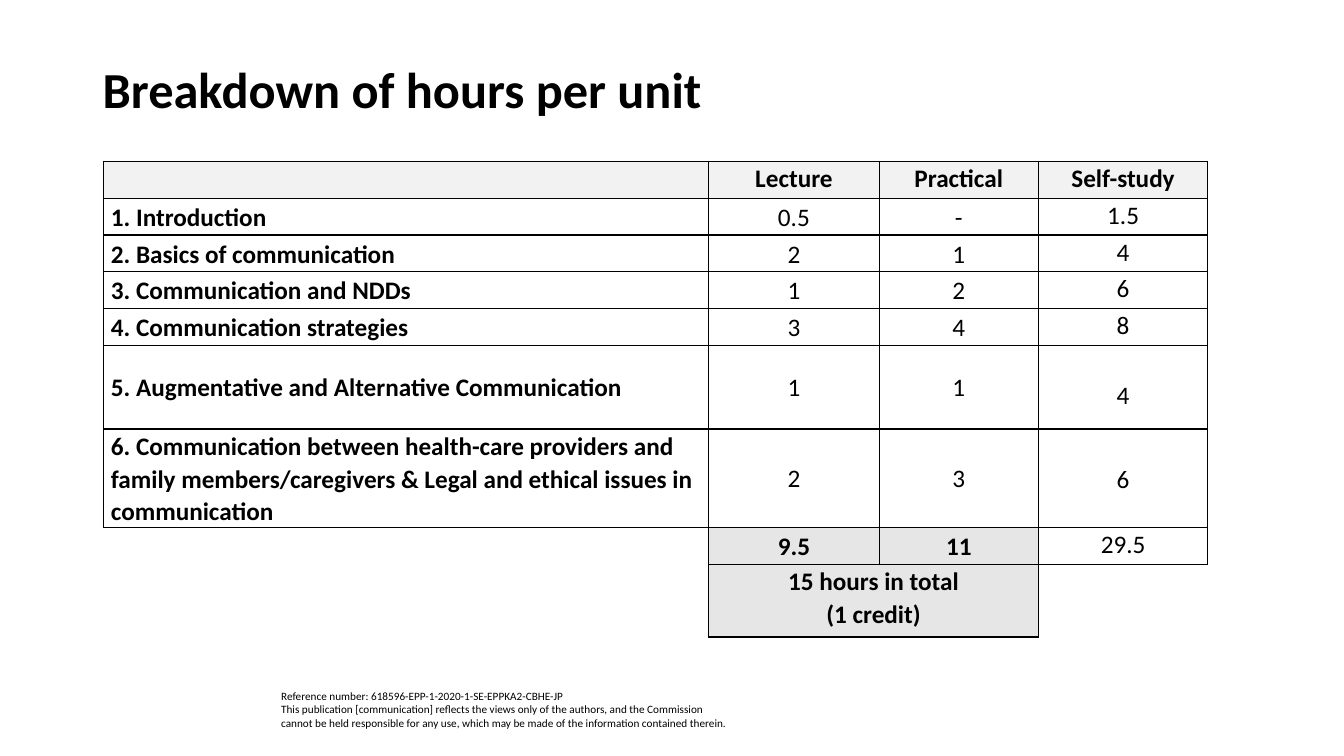
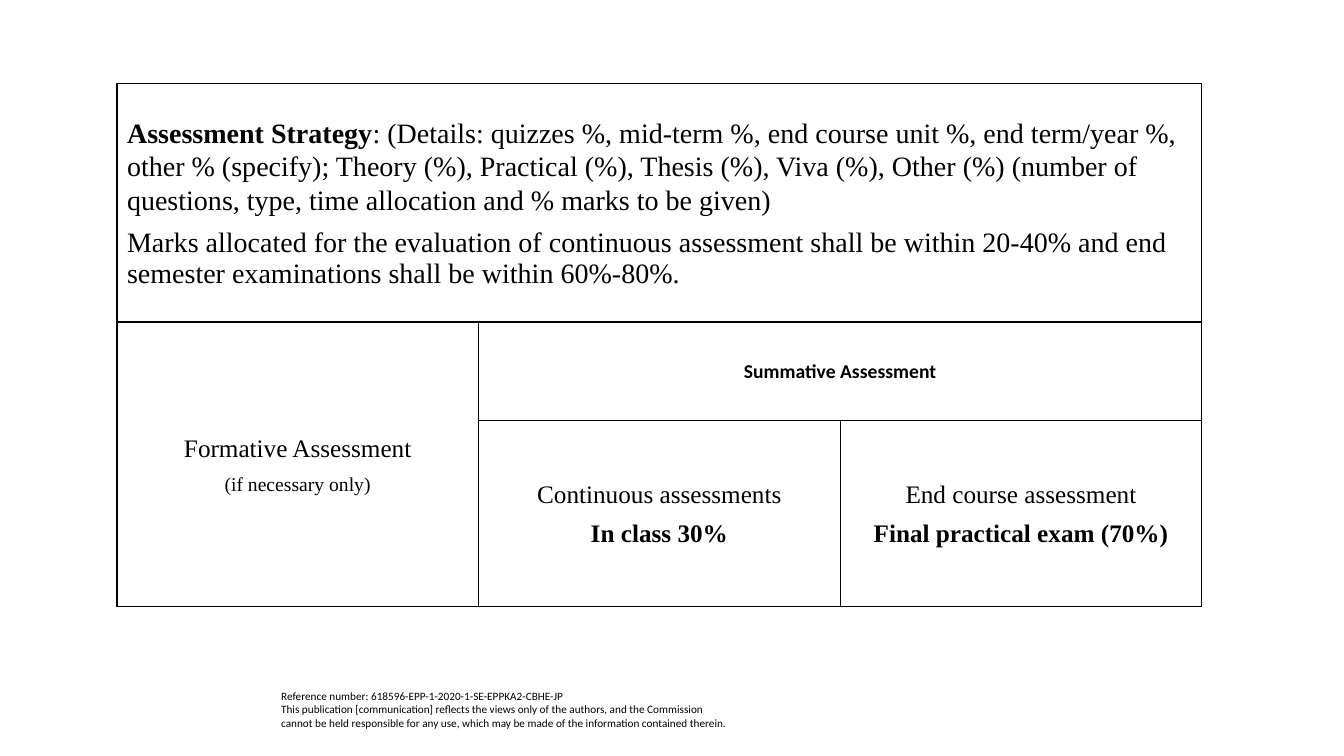
from lxml import etree
from pptx import Presentation
from pptx.dml.color import RGBColor
from pptx.enum.text import MSO_ANCHOR, PP_ALIGN
from pptx.oxml.ns import qn
from pptx.util import Inches, Pt

LEFT, CENTER = PP_ALIGN.LEFT, PP_ALIGN.CENTER
TOP, MIDDLE = MSO_ANCHOR.TOP, MSO_ANCHOR.MIDDLE

COLORS = {"text": "000000", "border": "000000", "plain": "FFFFFF",
          "header": "F2F2F2", "total": "E7E6E6"}
SANS, SERIF = "Calibri", "Times New Roman"
LINE_SPACING = 1.07
LINE_HEIGHT = 0.33  # one 18 pt line in the hours table

# Boxes in inches: left, top, width, height
SLIDE_SIZE = (13.33, 7.5)
TITLE_BOX = (0.92, 0.4, 11.5, 0.96)
FOOTER_BOX = (2.69, 6.79, 4.64, 0.5)
HOURS_BOX = (1.03, 1.6, 10.95, 4.72)
ASSESSMENT_BOX = (1.16, 0.83, 10.76, 5.19)

FOOTER = ("Reference number: 618596-EPP-1-2020-1-SE-EPPKA2-CBHE-JP\v"
          "This publication [communication] reflects the views only of the authors, "
          "and the Commission cannot be held responsible for any use, which may be "
          "made of the information contained therein.")

HOURS_HEADER = ("", "Lecture", "Practical", "Self-study")
HOURS_UNITS = [
    ("1. Introduction", "0.5", "-", "1.5"),
    ("2. Basics of communication", "2", "1", "4"),
    ("3. Communication and NDDs", "1", "2", "6"),
    ("4. Communication strategies", "3", "4", "8"),
    ("5. Augmentative and Alternative Communication", "1", "1", "4"),
    ("6. Communication between health-care providers and family members/caregivers "
     "& Legal and ethical issues in communication", "2", "3", "6"),
]
HOURS_TOTALS = ("", "9.5", "11", "29.5")

STRATEGY_LABEL = "Assessment Strategy"
STRATEGY_DETAILS = (": (Details: quizzes %, mid-term %, end course unit %, end term/year %, "
                    "other % (specify); Theory (%), Practical (%), Thesis (%), Viva (%), "
                    "Other (%) (number of questions, type, time allocation and % marks "
                    "to be given)")
MARKS_RULE = ("Marks allocated for the evaluation of continuous assessment shall be within "
              "20-40% and end semester examinations shall be within 60%-80%.")


# Shared text and table helpers
def style_font(font, size, name=SANS, bold=False):
    font.size, font.name, font.bold = Pt(size), name, bold
    font.color.rgb = RGBColor.from_string(COLORS["text"])


def add_text(slide, box, text, size, bold=False, anchor=TOP):
    shape = slide.shapes.add_textbox(*map(Inches, box))
    frame = shape.text_frame
    frame.word_wrap, frame.vertical_anchor = True, anchor
    frame.text = text
    style_font(frame.paragraphs[0].font, size, bold=bold)


def add_footer(slide):
    add_text(slide, FOOTER_BOX, FOOTER, 8)


def write_cell(cell, lines, size, name=SANS, bold=False, align=CENTER,
               anchor=MIDDLE, spacing=LINE_SPACING, after=0):
    """Fill a cell; each line is a text or a dict with its own text, size, bold."""
    cell.vertical_anchor = anchor
    frame = cell.text_frame
    for index, line in enumerate(lines):
        own = line if isinstance(line, dict) else {"text": line}
        paragraph = frame.paragraphs[0] if index == 0 else frame.add_paragraph()
        paragraph.text = own["text"]
        paragraph.alignment = align
        if index == 0 or not after:
            paragraph.line_spacing = spacing
        if index < len(lines) - 1:
            paragraph.space_after = Pt(after)
        style_font(paragraph.font, own.get("size", size), name, own.get("bold", bold))


def set_borders(cell, sides):
    properties = cell._tc.get_or_add_tcPr()
    for side in "LRTB":
        line = etree.SubElement(properties, qn("a:ln" + side), w=str(Pt(1)))
        if side in sides:
            fill = etree.SubElement(line, qn("a:solidFill"))
            etree.SubElement(fill, qn("a:srgbClr"), val=COLORS["border"])
        else:
            etree.SubElement(line, qn("a:noFill"))


def fill_cell(cell, color):
    cell.fill.solid()
    cell.fill.fore_color.rgb = RGBColor.from_string(COLORS[color])


def add_grid(slide, box, columns, rows, open_cells=None):
    """Add a bordered table whose column and row weights share out the box."""
    open_cells = open_cells or {}
    left, top, width, height = box
    table = slide.shapes.add_table(len(rows), len(columns), *map(Inches, box)).table
    table.first_row = table.horz_banding = False
    for column, weight in zip(table.columns, columns):
        column.width = Inches(width * weight / sum(columns))
    for row, weight in zip(table.rows, rows):
        row.height = Inches(height * weight / sum(rows))
    for row in range(len(rows)):
        for column in range(len(columns)):
            cell = table.cell(row, column)
            set_borders(cell, open_cells.get((row, column), "LRTB"))
            fill_cell(cell, "plain")
    return table


# Hours slide
def fill_hours_table(slide, box):
    row_weights = [0.37] * 5 + [0.84, 0.99, 0.37, 0.73]
    total_row = len(HOURS_UNITS) + 1
    credit_row = total_row + 1
    table = add_grid(slide, box, [6, 1.69, 1.58, 1.68], row_weights,
                     {(total_row, 0): "TR", (credit_row, 0): "R", (credit_row, 3): "LT"})
    for cell in table.iter_cells():
        cell.margin_left = cell.margin_right = Inches(0.07)
        cell.margin_top = cell.margin_bottom = 0

    for row, texts in enumerate([HOURS_HEADER, *HOURS_UNITS, HOURS_TOTALS]):
        for column, text in enumerate(texts):
            cell = table.cell(row, column)
            is_header, is_total = row == 0, row == total_row
            is_self_study = column == 3
            write_cell(cell, [text], 18,
                       bold=is_header or column == 0 or (is_total and not is_self_study),
                       align=LEFT if column == 0 else CENTER,
                       anchor=TOP if is_header or is_self_study else MIDDLE)
            if is_header:
                fill_cell(cell, "header")
            elif is_total and column in (1, 2):
                fill_cell(cell, "total")

    # Self-study hours of the tall rows start one line lower
    for row in (5, 6):
        table.cell(row, 3).margin_top = Inches(LINE_HEIGHT)

    credit = table.cell(credit_row, 1)
    credit.merge(table.cell(credit_row, 2))
    write_cell(credit, ["15 hours in total", "(1 credit)"], 18, bold=True, anchor=TOP)
    fill_cell(credit, "total")


def build_hours_slide(slide):
    add_footer(slide)
    add_text(slide, TITLE_BOX, "Breakdown of hours per unit", 36, bold=True, anchor=MIDDLE)
    fill_hours_table(slide, HOURS_BOX)


# Assessment slide
def fill_assessment_table(slide, box):
    table = add_grid(slide, box, [1, 1, 1], [2.37, 0.98, 1.85])
    for first, last in (((0, 0), (0, 2)), ((1, 0), (2, 0)), ((1, 1), (1, 2))):
        table.cell(*first).merge(table.cell(*last))

    strategy = table.cell(0, 0)
    write_cell(strategy, [STRATEGY_LABEL, MARKS_RULE], 20, SERIF, align=LEFT, after=8)
    paragraph = strategy.text_frame.paragraphs[0]
    paragraph.runs[0].font.bold = True
    paragraph.add_run().text = STRATEGY_DETAILS

    write_cell(table.cell(1, 0),
               ["Formative Assessment", {"text": "(if necessary only)", "size": 14}],
               18, SERIF, after=8)
    write_cell(table.cell(1, 1), ["Summative Assessment"], 14, bold=True, spacing=1)
    parts = [("Continuous assessments", "In class 30%"),
             ("End course assessment", "Final practical exam (70%)")]
    for column, (kind, share) in enumerate(parts, start=1):
        write_cell(table.cell(2, column), [kind, {"text": share, "bold": True}],
                   18, SERIF, after=8)


def build_assessment_slide(slide):
    add_footer(slide)
    fill_assessment_table(slide, ASSESSMENT_BOX)


def main():
    presentation = Presentation()
    presentation.slide_width, presentation.slide_height = map(Inches, SLIDE_SIZE)
    blank = presentation.slide_layouts[6]
    for build in (build_hours_slide, build_assessment_slide):
        build(presentation.slides.add_slide(blank))
    presentation.save("out.pptx")


if __name__ == "__main__":
    main()
